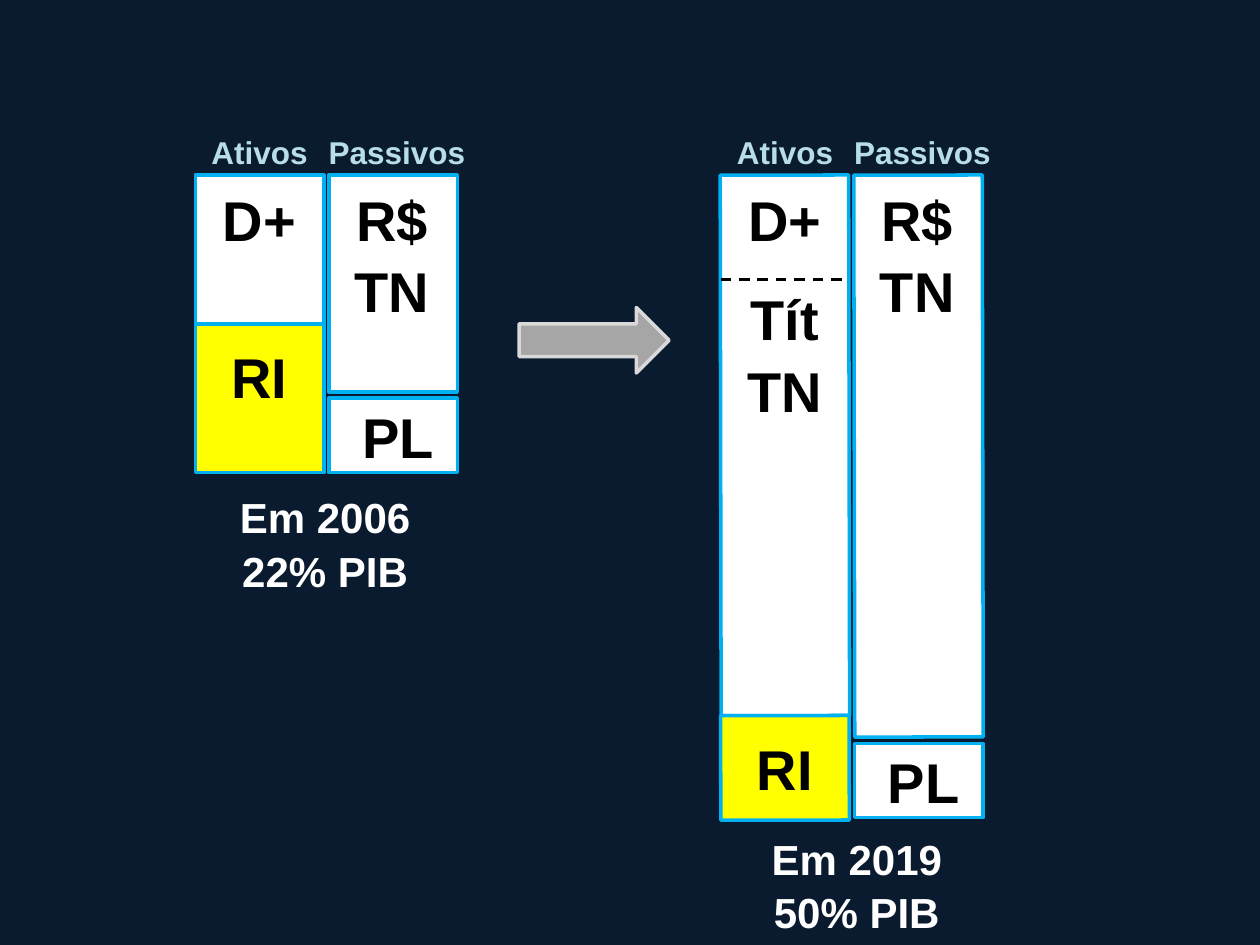
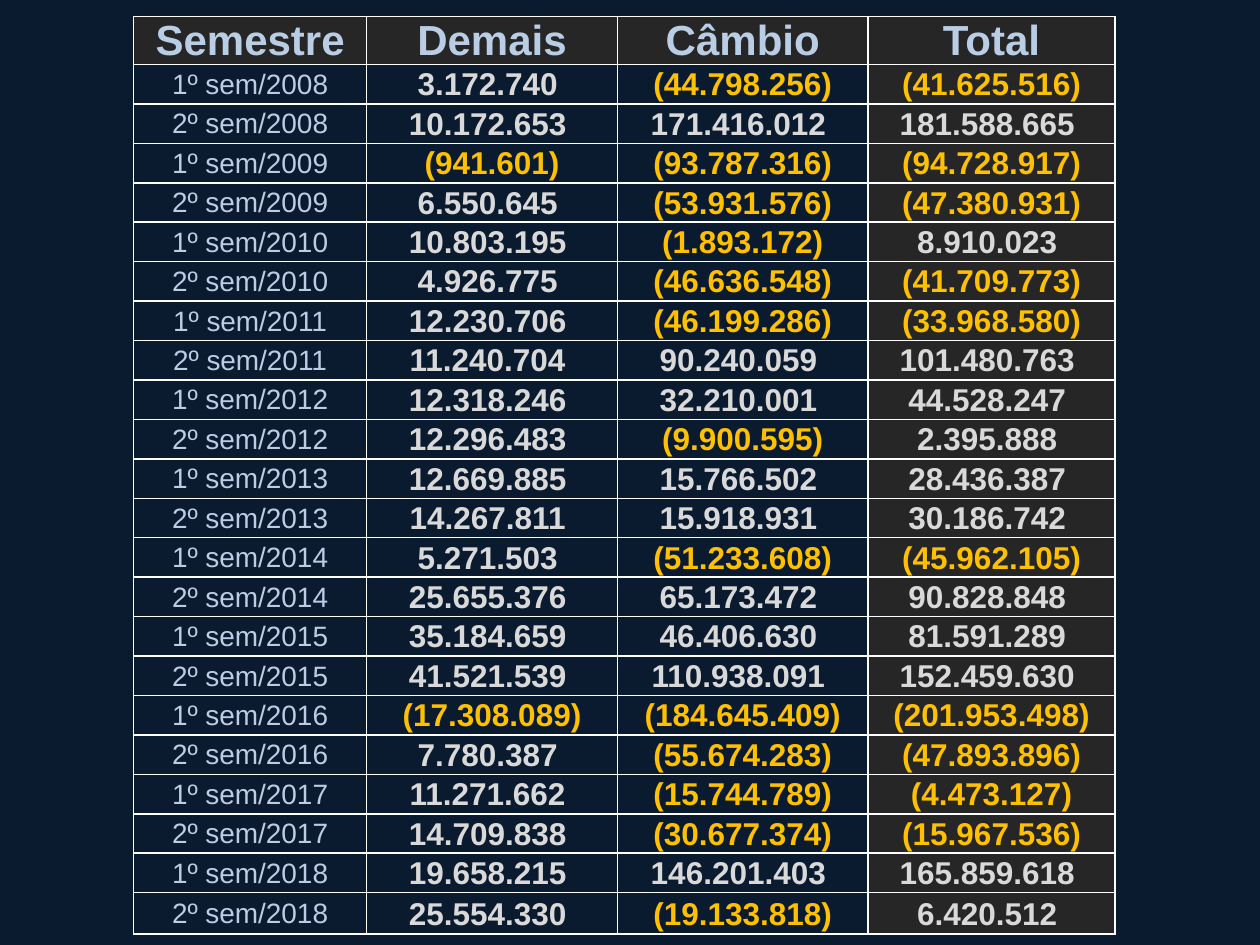
import dataclasses
import typing

import lxml.etree
import pptx
import pptx.dml.color
import pptx.enum.dml
import pptx.enum.shapes
import pptx.enum.text
import pptx.oxml
import pptx.oxml.ns
import pptx.util

Inches = pptx.util.Inches
Pt = pptx.util.Pt
RGB = pptx.dml.color.RGBColor
qn = pptx.oxml.ns.qn
SHAPE = pptx.enum.shapes.MSO_SHAPE

FONT = "Arial"
NAVY = RGB(0x0B, 0x1B, 0x2F)
WHITE = RGB(0xFF, 0xFF, 0xFF)
BLACK = RGB(0x00, 0x00, 0x00)
YELLOW = RGB(0xFF, 0xFF, 0x00)
SKY = RGB(0x00, 0xB0, 0xF0)
PALE_TEAL = RGB(0xB7, 0xDE, 0xE8)
PALE_BLUE = RGB(0xB9, 0xCD, 0xE5)
GRAY = RGB(0xA6, 0xA6, 0xA6)
LIGHT_GRAY = RGB(0xD9, 0xD9, 0xD9)
CHARCOAL = RGB(0x26, 0x26, 0x26)
AMBER = RGB(0xFF, 0xC0, 0x00)

BAR_TOP = 1.39
BAR_W = 1.02
LIABILITY_DX = 1.06
EQUITY_H = 0.59

HEADERS = ["Semestre", "Demais", "Câmbio", "Total"]
COL_WIDTHS = [1.85, 1.99, 1.99, 1.96]
HEADER_H = 0.38
LAST_ROW_H = 0.33
BODY_H = 6.58
FIRST_YEAR = 2008
RESULTS = [
    (3172740, -44798256),
    (10172653, 171416012),
    (-941601, -93787316),
    (6550645, -53931576),
    (10803195, -1893172),
    (4926775, -46636548),
    (12230706, -46199286),
    (11240704, 90240059),
    (12318246, 32210001),
    (12296483, -9900595),
    (12669885, 15766502),
    (14267811, 15918931),
    (5271503, -51233608),
    (25655376, 65173472),
    (35184659, 46406630),
    (41521539, 110938091),
    (-17308089, -184645409),
    (7780387, -55674283),
    (11271662, -15744789),
    (14709838, -30677374),
    (19658215, 146201403),
    (25554330, -19133818),
]


@dataclasses.dataclass
class BalanceSheet:
    left: float
    assets_h: float
    reserves_h: float
    liabilities_h: float
    caption: str
    caption_left: float
    caption_top: float
    tilt: float = 0
    securities_top: typing.Optional[float] = None


SHEETS = [
    BalanceSheet(1.55, 1.18, 1.18, 1.72, "Em 2006\n22% PIB", 1.54, 3.83),
    BalanceSheet(5.72, 4.29, 0.83, 4.46, "Em 2019\n50% PIB", 5.76, 6.54,
                 tilt=-0.1, securities_top=2.22),
]


def format_runs(tf, size: float, color: RGB, bold: bool = True) -> None:
    for p in tf.paragraphs:
        p.alignment = pptx.enum.text.PP_ALIGN.CENTER
        for r in p.runs:
            r.font.name = FONT
            r.font.size = Pt(size)
            r.font.bold = bold
            r.font.color.rgb = color


def add_shape(s, kind, left: float, top: float, width: float, height: float,
              fill: RGB = WHITE, line: RGB = SKY, tilt: float = 0) -> None:
    sp = s.shapes.add_shape(kind, Inches(left), Inches(top), Inches(width), Inches(height))
    sp.shadow.inherit = False
    sp.fill.solid()
    sp.fill.fore_color.rgb = fill
    sp.line.color.rgb = line
    sp.line.width = Pt(2)
    sp.rotation = tilt


def add_label(s, text: str, left: float, top: float, width: float = BAR_W,
              size: float = 32, color: RGB = BLACK, tilt: float = 0) -> None:
    lines = text.count("\n") + 1
    height = 0.1 + lines * size * 1.22 / 72
    sp = s.shapes.add_textbox(Inches(left), Inches(top), Inches(width), Inches(height))
    sp.rotation = tilt
    tf = sp.text_frame
    tf.word_wrap = True
    tf.auto_size = pptx.enum.text.MSO_AUTO_SIZE.SHAPE_TO_FIT_TEXT
    tf.text = text
    for p in tf.paragraphs:
        p.line_spacing = 1.06
    format_runs(tf, size, color)


def add_dashed_line(s, left: float, top: float, width: float) -> None:
    cx = s.shapes.add_connector(pptx.enum.shapes.MSO_CONNECTOR.STRAIGHT,
                                Inches(left), Inches(top), Inches(left + width), Inches(top))
    cx.line.color.rgb = BLACK
    cx.line.width = Pt(1.5)
    cx.line.dash_style = pptx.enum.dml.MSO_LINE.DASH
    lxml.etree.SubElement(cx._element.spPr, qn("a:effectLst"))


def draw_balance_sheet(s, b: BalanceSheet) -> None:
    right = b.left + LIABILITY_DX
    reserves_top = BAR_TOP + b.assets_h
    equity_top = BAR_TOP + b.liabilities_h + 0.05

    add_shape(s, SHAPE.RECTANGLE, right, equity_top, BAR_W, EQUITY_H)
    add_shape(s, SHAPE.RECTANGLE, right, BAR_TOP, BAR_W, b.liabilities_h, tilt=b.tilt)
    add_shape(s, SHAPE.RECTANGLE, b.left, BAR_TOP, BAR_W, b.assets_h, tilt=b.tilt)
    add_shape(s, SHAPE.RECTANGLE, b.left, reserves_top, BAR_W, b.reserves_h,
              fill=YELLOW, tilt=b.tilt)

    add_label(s, "Ativos", b.left, 0.99, size=18, color=PALE_TEAL, tilt=b.tilt)
    add_label(s, "Passivos", b.left + 0.93, 0.99, 1.34, 18, PALE_TEAL, b.tilt)
    add_label(s, "D+", b.left, BAR_TOP, tilt=b.tilt)
    add_label(s, "R$\nTN", b.left + 1.05, BAR_TOP, tilt=b.tilt)
    add_label(s, "RI", b.left, reserves_top + 0.07, tilt=b.tilt)
    add_label(s, "PL", b.left + 1.1, equity_top - 0.05)
    if b.securities_top is not None:
        add_label(s, "Tít\nTN", b.left, b.securities_top - 0.04, tilt=b.tilt)
        add_dashed_line(s, b.left, b.securities_top, BAR_W)
    add_label(s, b.caption, b.caption_left, b.caption_top, 2.08, 24, WHITE)


def money(value: int) -> str:
    digits = f"{abs(value):,}".replace(",", ".")
    return f"({digits})" if value < 0 else f"{digits} "


def set_borders(cell, color: RGB, width: float) -> None:
    tc_pr = cell._tc.get_or_add_tcPr()
    for i, side in enumerate(("lnL", "lnR", "lnT", "lnB")):
        ln = pptx.oxml.parse_xml(
            f'<a:{side} xmlns:a="http://schemas.openxmlformats.org/drawingml/2006/main" '
            f'w="{Pt(width)}"><a:solidFill><a:srgbClr val="{color}"/></a:solidFill></a:{side}>')
        tc_pr.insert(i, ln)


def set_cell(cell, text: str, size: float, color: RGB, bold: bool, shaded: bool) -> None:
    cell.margin_left = cell.margin_right = cell.margin_top = Inches(0.01)
    cell.margin_bottom = 0
    cell.vertical_anchor = pptx.enum.text.MSO_ANCHOR.MIDDLE
    if shaded:
        cell.fill.solid()
        cell.fill.fore_color.rgb = CHARCOAL
    else:
        cell.fill.background()
    set_borders(cell, WHITE, 1)
    cell.text_frame.text = text
    format_runs(cell.text_frame, size, color, bold)


def draw_results_table(s) -> None:
    height = HEADER_H + BODY_H + LAST_ROW_H
    table = s.shapes.add_table(len(RESULTS) + 1, len(HEADERS), Inches(1.06), Inches(0.13),
                               Inches(sum(COL_WIDTHS)), Inches(height)).table
    table.first_row = table.horz_banding = False
    for col, width in zip(table.columns, COL_WIDTHS):
        col.width = Inches(width)
    for row in table.rows:
        row.height = Inches(BODY_H / (len(RESULTS) - 1))
    table.rows[0].height = Inches(HEADER_H)
    table.rows[len(RESULTS)].height = Inches(LAST_ROW_H)

    for j, header in enumerate(HEADERS):
        set_cell(table.cell(0, j), header, 24, PALE_BLUE, True, True)
    for i, (others, exchange) in enumerate(RESULTS):
        semester = f"{i % 2 + 1}º sem/{FIRST_YEAR + i // 2}"
        set_cell(table.cell(i + 1, 0), semester, 16, PALE_BLUE, False, False)
        for j, value in enumerate((others, exchange, others + exchange), start=1):
            color = AMBER if value < 0 else LIGHT_GRAY
            set_cell(table.cell(i + 1, j), money(value), 18, color, True,
                     HEADERS[j] == "Total")


def main() -> None:
    prs = pptx.Presentation()
    prs.slide_width = Inches(10)
    prs.slide_height = Inches(7.5)
    background = prs.slide_master.background.fill
    background.solid()
    background.fore_color.rgb = NAVY
    blank = prs.slide_layouts[6]

    s = prs.slides.add_slide(blank)
    for sheet in SHEETS:
        draw_balance_sheet(s, sheet)
    add_shape(s, SHAPE.RIGHT_ARROW, 4.12, 2.44, 1.19, 0.52, GRAY, LIGHT_GRAY)

    draw_results_table(prs.slides.add_slide(blank))
    prs.save("out.pptx")


if __name__ == "__main__":
    main()
